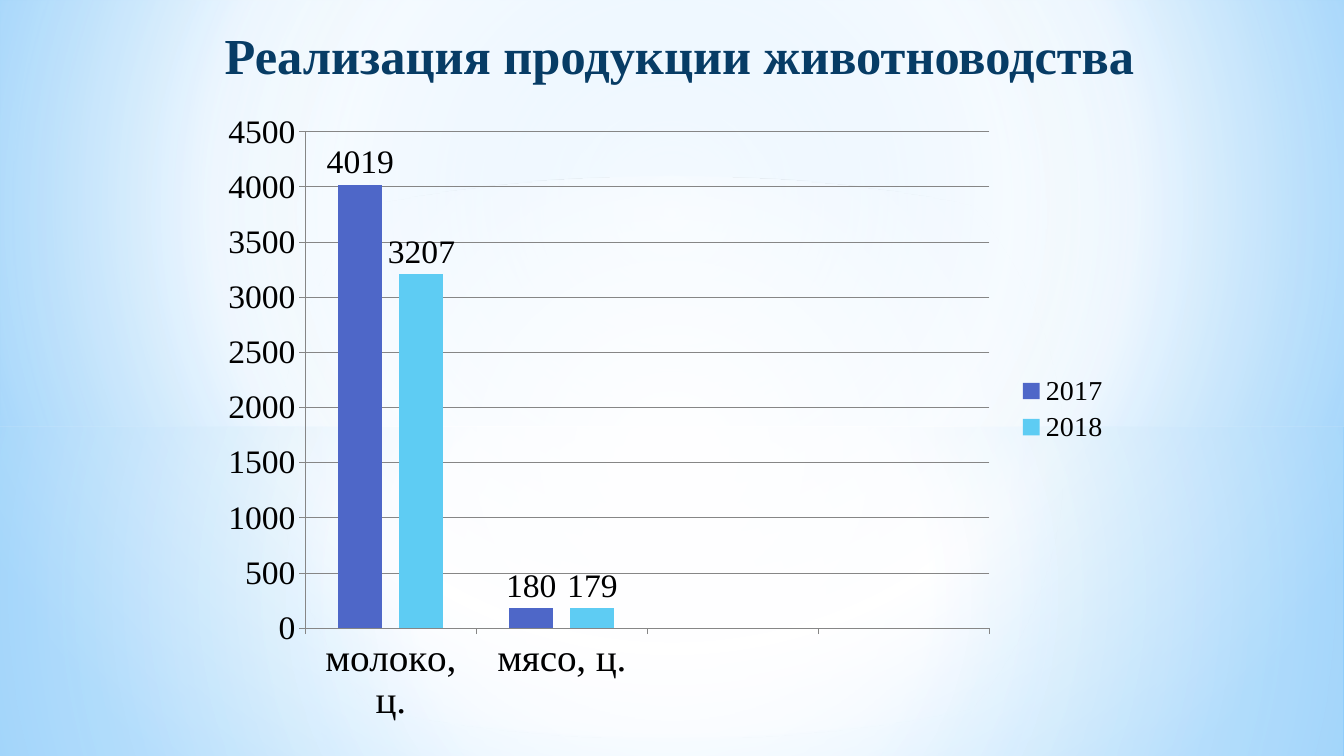
from lxml import etree
from pptx import Presentation
from pptx.chart.data import CategoryChartData
from pptx.dml.color import RGBColor
from pptx.enum.chart import XL_CHART_TYPE, XL_LABEL_POSITION, XL_LEGEND_POSITION, XL_TICK_MARK
from pptx.enum.shapes import MSO_SHAPE as SHAPE
from pptx.enum.text import MSO_ANCHOR, MSO_AUTO_SIZE, PP_ALIGN
from pptx.oxml import parse_xml
from pptx.oxml.ns import nsdecls, qn
from pptx.util import Inches, Pt


def style_font(font, size, color="000000"):
    font.name = "Times New Roman"
    font.size = Pt(size)
    font.color.rgb = RGBColor.from_string(color)


def set_gradient(owner, stops, direction):
    owner.fill.gradient()
    grad = owner.element.find(".//" + qn("a:gradFill"))
    gs = "".join(
        f'<a:gs pos="{pos * 1000}"><a:srgbClr val="{color}">'
        f'<a:alpha val="{alpha * 1000}"/></a:srgbClr></a:gs>'
        for pos, color, alpha in stops)
    grad.getparent().replace(grad, parse_xml(
        f'<a:gradFill {nsdecls("a")} rotWithShape="1"><a:gsLst>{gs}</a:gsLst>{direction}</a:gradFill>'))


RADIAL = '<a:path path="circle"><a:fillToRect l="{}" t="{}" r="{}" b="{}"/></a:path>'
CENTERED = RADIAL.format(50000, 50000, 50000, 50000)
VERTICAL = '<a:lin ang="5400000" scaled="0"/>'
WHITE, SKY = "FFFFFF", "B4DCFA"

prs = Presentation()
prs.slide_width, prs.slide_height = Inches(13.33), Inches(7.5)
s = prs.slides.add_slide(prs.slide_layouts[5])

s.background.fill.gradient()
bg_pr = s.element.find(".//" + qn("p:bgPr"))
bg_grad = bg_pr.find(qn("a:gradFill"))
bg_stops = "".join(f'<a:gs pos="{pos * 1000}"><a:srgbClr val="{color}"/></a:gs>'
                   for pos, color in [(0, "9ED5FF"), (60, WHITE), (100, "5BB9FF")])
bg_pr.replace(bg_grad, parse_xml(
    f'<a:gradFill {nsdecls("a")} rotWithShape="1"><a:gsLst>{bg_stops}</a:gsLst>'
    f'{RADIAL.format(20000, 10000, 20000, 60000)}</a:gradFill>'))

glows = [
    (SHAPE.RECTANGLE, 4.23, 3.27, [(0, WHITE, 92), (37, WHITE, 77), (100, SKY, 80)], CENTERED),
    (SHAPE.RECTANGLE, 0, 4.23, [(0, WHITE, 90), (48, WHITE, 63), (100, SKY, 80)], CENTERED),
    (SHAPE.RECTANGLE, 2.9, 2.5, [(0, WHITE, 0), (29, WHITE, 30), (45, SKY, 40),
                                 (55, WHITE, 26), (65, SKY, 60), (100, WHITE, 0)], VERTICAL),
    (SHAPE.OVAL, 1.75, 5.58, [(0, WHITE, 100), (54, WHITE, 0)], CENTERED),
]
for kind, top, height, stops, direction in glows:
    sp = s.shapes.add_shape(kind, 0, Inches(top), prs.slide_width, Inches(height))
    sp.shadow.inherit = False
    sp.line.fill.background()
    set_gradient(sp, stops, direction)

data = CategoryChartData()
data.categories = ["молоко, ц.", "мясо, ц.", "", ""]
data.add_series("2017", [4019, 180, None, None])
data.add_series("2018", [3207, 179, None, None])
chart = s.shapes.add_chart(XL_CHART_TYPE.COLUMN_CLUSTERED, Inches(2.22), Inches(1.12),
                           Inches(8.89), Inches(6.04), data).chart
chart.has_title = False
chart.font.name = "Lato"
chart.font.size = Pt(18)

plot = chart.plots[0]
plot.vary_by_categories = False
plot.gap_width = 150
plot.overlap = -39
for series, color in zip(plot.series, ["4E67C8", "5ECCF3"]):
    series.format.fill.solid()
    series.format.fill.fore_color.rgb = RGBColor.from_string(color)
    labels = series.data_labels
    labels.show_value = True
    labels.position = XL_LABEL_POSITION.OUTSIDE_END
    style_font(labels.font, 24)

value_axis, category_axis = chart.value_axis, chart.category_axis
value_axis.minimum_scale, value_axis.maximum_scale = 0, 4500
value_axis.major_unit = 500
value_axis.has_major_gridlines = True
for axis, size in [(category_axis, 28), (value_axis, 24)]:
    style_font(axis.tick_labels.font, size)
    axis.major_tick_mark = XL_TICK_MARK.OUTSIDE
for line in [category_axis.format.line, value_axis.format.line, value_axis.major_gridlines.format.line]:
    line.color.rgb = RGBColor.from_string("868686")
    line.width = Pt(0.75)

chart.has_legend = True
chart.legend.position = XL_LEGEND_POSITION.RIGHT
chart.legend.include_in_layout = False
style_font(chart.legend.font, 20)

plot_area = chart.element.find(".//" + qn("c:plotArea"))
for old in plot_area.findall(qn("c:layout")):
    plot_area.remove(old)
layout = etree.Element(qn("c:layout"))
manual = etree.SubElement(layout, qn("c:manualLayout"))
for tag, val in [("layoutTarget", "inner"), ("xMode", "edge"), ("yMode", "edge"),
                 ("x", "0.091"), ("y", "0.032"), ("w", "0.763"), ("h", "0.838")]:
    etree.SubElement(manual, qn(f"c:{tag}")).set("val", val)
plot_area.insert(0, layout)

title = s.shapes.title
title.left, title.top, title.width, title.height = [Inches(v) for v in (0.9, 0.19, 11.68, 0.71)]
tf = title.text_frame
tf.text = "Реализация продукции животноводства"
tf.word_wrap = True
tf.auto_size = MSO_AUTO_SIZE.SHAPE_TO_FIT_TEXT
tf.vertical_anchor = MSO_ANCHOR.TOP
p = tf.paragraphs[0]
p.alignment = PP_ALIGN.CENTER
p.font.bold = True
style_font(p.font, 36, "073C65")
s.shapes.element.append(title.element)

prs.save("out.pptx")
